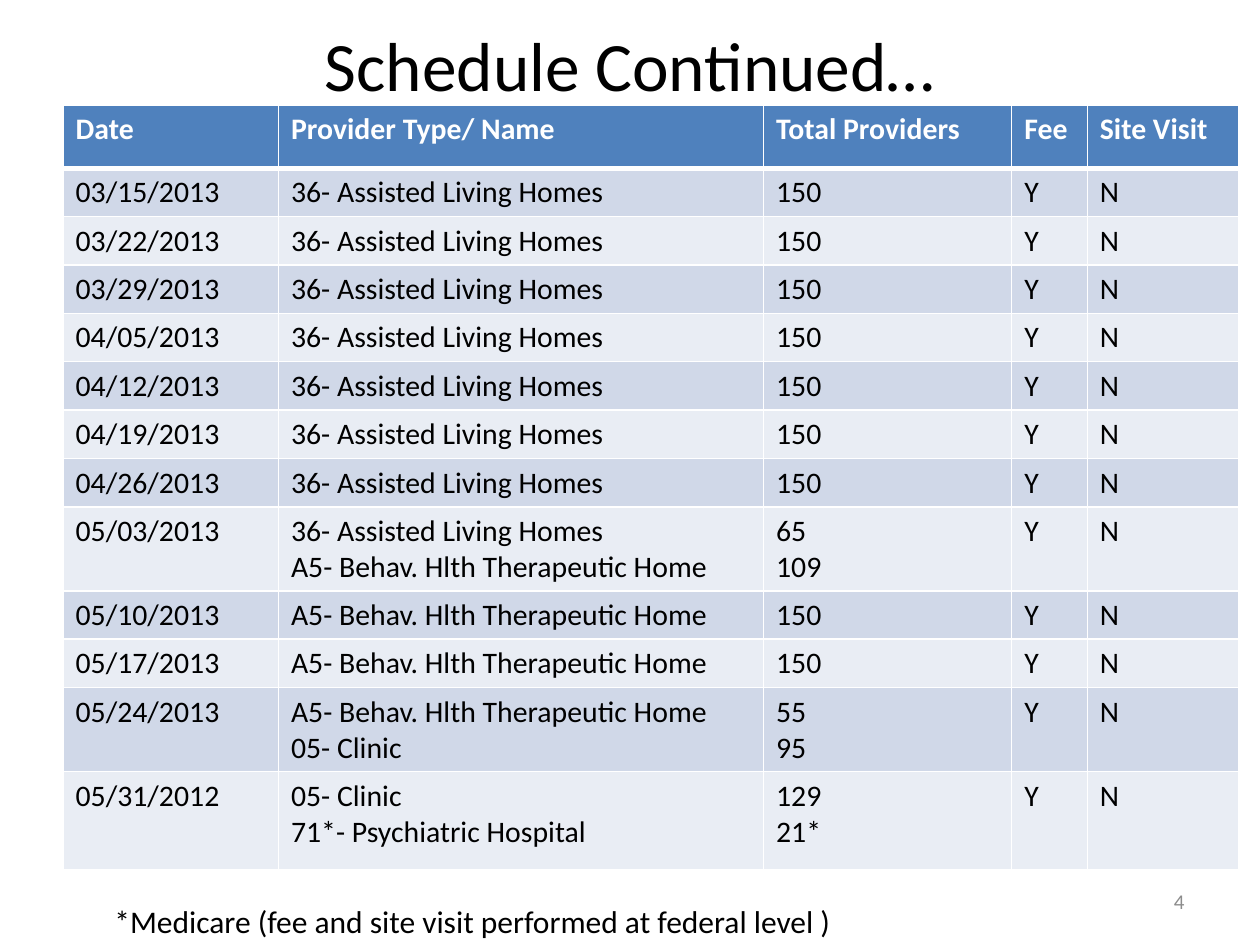
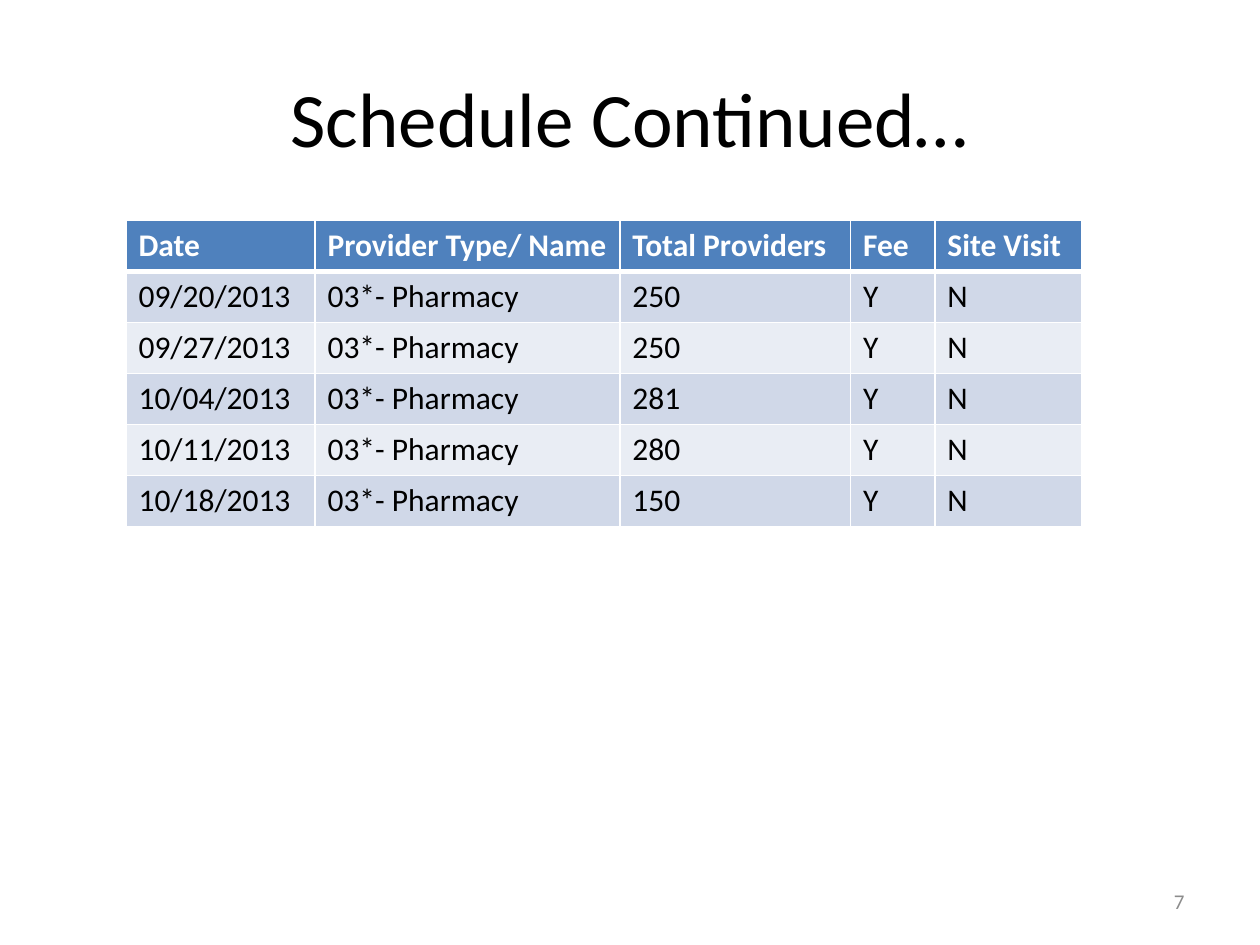
from dataclasses import dataclass

from lxml.etree import SubElement
from pptx import Presentation
from pptx.dml.color import RGBColor
from pptx.enum.text import MSO_ANCHOR, PP_ALIGN
from pptx.oxml.ns import qn
from pptx.util import Inches, Pt


@dataclass(frozen=True)
class Theme:
    font: str = "Calibri"
    ink: str = "000000"
    paper: str = "FFFFFF"
    muted: str = "8C8C8C"
    header: str = "4F81BD"
    bands: tuple = ("D0D8E8", "E9EDF4")
    title_size: float = 44
    tight_title_size: float = 39.6
    body_size: float = 18
    tight_body_size: float = 17
    number_size: float = 12
    rule: float = 1
    header_rule: float = 3


# The grid divides the slide into square cells
GRID_COLUMNS, GRID_ROWS = 100, 75
TITLE = "Schedule Continued…"
HEADINGS = ("Date", "Provider Type/ Name", "Total Providers", "Fee", "Site Visit")
FEE, SITE_VISIT = "Y", "N"

LIVING = "36- Assisted Living Homes"
THERAPEUTIC = "A5- Behav. Hlth Therapeutic Home"
CLINIC = "05- Clinic"
HOSPITAL = "71*- Psychiatric Hospital"
PHARMACY = "03*- Pharmacy"

LIVING_DATES = ("03/15/2013", "03/22/2013", "03/29/2013", "04/05/2013",
                "04/12/2013", "04/19/2013", "04/26/2013")
SPRING = [(date, LIVING, "150") for date in LIVING_DATES] + [
    ("05/03/2013", f"{LIVING}\n{THERAPEUTIC}", "65\n109"),
    ("05/10/2013", THERAPEUTIC, "150"),
    ("05/17/2013", THERAPEUTIC, "150"),
    ("05/24/2013", f"{THERAPEUTIC}\n{CLINIC}", "55\n95"),
    ("05/31/2012", f"{CLINIC}\n{HOSPITAL}", "129\n21*"),
]
PHARMACY_TOTALS = {"09/20/2013": "250", "09/27/2013": "250", "10/04/2013": "281",
                   "10/11/2013": "280", "10/18/2013": "150"}
AUTUMN = [(date, PHARMACY, total) for date, total in PHARMACY_TOTALS.items()]


class Deck:
    def __init__(self, theme):
        self.theme = theme
        self.presentation = Presentation()
        self.presentation.slide_width = Inches(10)
        self.presentation.slide_height = Inches(7.5)
        self.slide = None

    def x(self, columns):
        return round(self.presentation.slide_width * columns / GRID_COLUMNS)

    def y(self, rows):
        return round(self.presentation.slide_height * rows / GRID_ROWS)

    def add_slide(self, number):
        self.slide = self.presentation.slides.add_slide(
            self.presentation.slide_layouts[6])
        background = self.slide.background.fill
        background.solid()
        background.fore_color.rgb = RGBColor.from_string(self.theme.paper)
        self.text(number, 71.7, 69.5, 23.3, 4, self.theme.number_size,
                  self.theme.muted, PP_ALIGN.RIGHT, MSO_ANCHOR.MIDDLE)

    def style(self, frame, size, color, bold=False, align=PP_ALIGN.LEFT):
        for paragraph in frame.paragraphs:
            paragraph.alignment = align
            paragraph.font.name = self.theme.font
            paragraph.font.size = Pt(size)
            paragraph.font.bold = bold
            paragraph.font.color.rgb = RGBColor.from_string(color)

    def text(self, words, left, top, width, height, size, color,
             align=PP_ALIGN.LEFT, anchor=MSO_ANCHOR.TOP):
        frame = self.slide.shapes.add_textbox(
            self.x(left), self.y(top), self.x(width), self.y(height)).text_frame
        frame.word_wrap = True
        frame.vertical_anchor = anchor
        frame.text = words
        self.style(frame, size, color, align=align)

    def title(self, top, height, size):
        self.text(TITLE, 5, top, 90, height, size, self.theme.ink,
                  PP_ALIGN.CENTER, MSO_ANCHOR.MIDDLE)

    def borders(self, cell, top, bottom):
        properties = cell._tc.get_or_add_tcPr()
        rule = self.theme.rule
        for side, width in (("L", rule), ("R", rule), ("T", top), ("B", bottom)):
            line = SubElement(properties, qn(f"a:ln{side}"), w=str(Pt(width)))
            fill = SubElement(line, qn("a:solidFill"))
            SubElement(fill, qn("a:srgbClr"), val=self.theme.paper)

    def schedule(self, entries, left, top, widths, heights, size):
        theme = self.theme
        lines = [HEADINGS] + [(*entry, FEE, SITE_VISIT) for entry in entries]
        table = self.slide.shapes.add_table(
            len(lines), len(HEADINGS), self.x(left), self.y(top),
            self.x(sum(widths)), self.y(sum(heights))).table
        for column, width in zip(table.columns, widths):
            column.width = self.x(width)
        for index, (row, height, line) in enumerate(zip(table.rows, heights, lines)):
            row.height = self.y(height)
            is_header = index == 0
            shade = theme.header if is_header else theme.bands[(index - 1) % 2]
            color = theme.paper if is_header else theme.ink
            above = theme.header_rule if index == 1 else theme.rule
            below = theme.header_rule if is_header else theme.rule
            for cell, words in zip(row.cells, line):
                cell.text = words
                self.style(cell.text_frame, size, color, is_header)
                self.borders(cell, above, below)
                cell.fill.solid()
                cell.fill.fore_color.rgb = RGBColor.from_string(shade)


def main():
    theme = Theme()
    deck = Deck(theme)

    # Spring schedule with its footnote
    deck.add_slide("4")
    deck.title(1.7, 6.7, theme.tight_title_size)
    spring_heights = [5] + [6.6 if "\n" in names else 3.7 for _, names, _ in SPRING]
    spring_heights[-1] = 7.8
    deck.schedule(SPRING, 5, 8.35, (17.1, 38.5, 19.7, 6, 12),
                  spring_heights, theme.tight_body_size)
    deck.text("*Medicare (fee and site visit performed at federal level )",
              8.1, 71.1, 69.4, 4, theme.body_size, theme.ink)

    # Autumn schedule
    deck.add_slide("7")
    deck.title(3, 12.5, theme.title_size)
    deck.schedule(AUTUMN, 10, 17.5, (15, 24.2, 18.3, 6.7, 11.7),
                  [4.05] * (len(AUTUMN) + 1), theme.body_size)

    deck.presentation.save("out.pptx")


if __name__ == "__main__":
    main()
